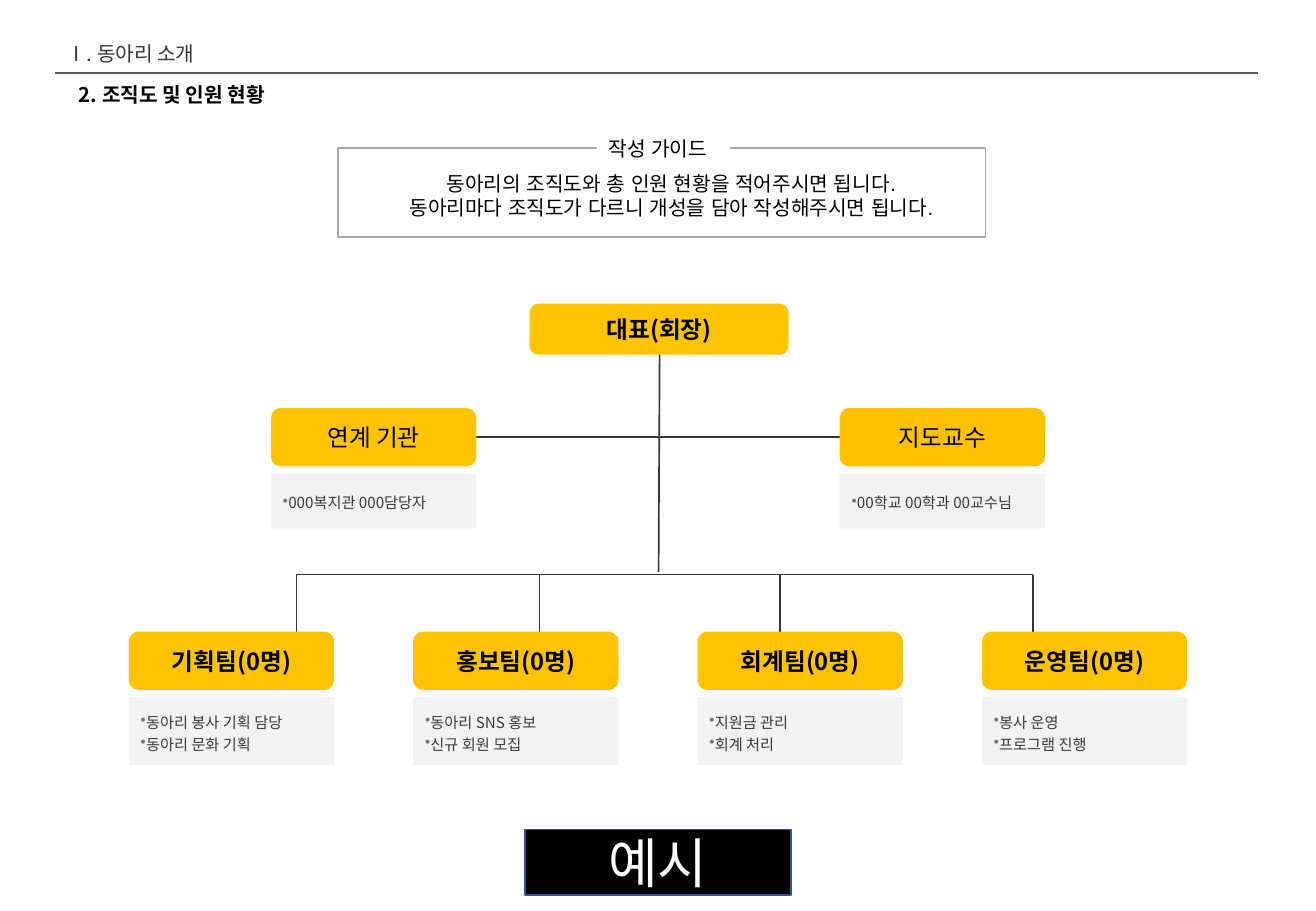
from lxml import etree
from pptx import Presentation
from pptx.dml.color import RGBColor
from pptx.enum.shapes import MSO_CONNECTOR, MSO_SHAPE
from pptx.enum.text import MSO_ANCHOR, MSO_AUTO_SIZE, PP_ALIGN
from pptx.oxml.ns import qn
from pptx.util import Inches, Pt

RECT, ROUND = MSO_SHAPE.RECTANGLE, MSO_SHAPE.ROUNDED_RECTANGLE
STRAIGHT = MSO_CONNECTOR.STRAIGHT
TOP, MIDDLE, BOTTOM = MSO_ANCHOR.TOP, MSO_ANCHOR.MIDDLE, MSO_ANCHOR.BOTTOM
LEFT, CENTER = PP_ALIGN.LEFT, PP_ALIGN.CENTER
FIXED = MSO_AUTO_SIZE.NONE

BLACK = RGBColor(0x00, 0x00, 0x00)
WHITE = RGBColor(0xFF, 0xFF, 0xFF)
INK = RGBColor(0x36, 0x33, 0x3A)
RULE = RGBColor(0x59, 0x59, 0x59)
FRAME = RGBColor(0xA6, 0xA6, 0xA6)
YELLOW = RGBColor(0xFF, 0xC3, 0x05)
AMBER = RGBColor(0xFF, 0xC0, 0x00)
PALE = RGBColor(0xF2, 0xF2, 0xF2)
NOTE = RGBColor(0x3B, 0x38, 0x38)
BULLET = RGBColor(0x76, 0x6F, 0x6B)
BLUE = RGBColor(0x32, 0x54, 0x91)
SANS, ARIAL = "Noto Sans CJK KR", "Arial"

deck = Presentation()
deck.slide_width, deck.slide_height = Inches(10.83), Inches(7.5)
slide = deck.slides.add_slide(deck.slide_layouts[5])
shapes = slide.shapes


def box(kind, place, fill=None, line=None):
    shape = shapes.add_shape(kind, *map(Inches, place))
    shape.shadow.inherit = False
    for part, color in ((shape.fill, fill), (shape.line.fill, line)):
        if color is None:
            part.background()
        else:
            part.solid()
            part.fore_color.rgb = color
    if line is not None:
        shape.line.width = Pt(1)
    return shape


def write(shape, lines, size, color, face=SANS, bold=False, frame={}, para={}, bullet=False):
    text = shape.text_frame
    text.text = "\n".join(lines)
    for key, value in {"word_wrap": True, "auto_size": FIXED, "vertical_anchor": MIDDLE, **frame}.items():
        setattr(text, key, value)
    for item in text.paragraphs:
        for key, value in {"alignment": CENTER, **para}.items():
            setattr(item, key, value)
        if bullet:
            props = item._p.get_or_add_pPr()
            props.set("marL", "0")
            props.set("indent", str(Inches(-0.2)))
            tint = etree.SubElement(props, qn("a:buClr"))
            etree.SubElement(tint, qn("a:srgbClr"), val=str(BULLET))
            etree.SubElement(props, qn("a:buChar"), char="•")
        font = item.runs[0].font
        for key, value in {"name": face, "size": Pt(size), "bold": bold}.items():
            setattr(font, key, value)
        font.color.rgb = color
        latin = font._element.find(qn("a:latin"))
        latin.addnext(etree.Element(qn("a:ea"), typeface=face))


title = shapes.title
spot = {"left": 0.55, "top": 0.65, "width": 3.75, "height": 0.32}
for key, value in spot.items():
    setattr(title, key, Inches(value))
write(title, ["2. 조직도 및 인원 현황"], 12, BLACK, bold=True, frame={"vertical_anchor": TOP},
      para={"alignment": LEFT, "line_spacing": 0.9, "space_before": Pt(10)})

head = shapes.add_textbox(*map(Inches, (0.45, 0.21, 1.34, 0.38)))
write(head, ["Ⅰ. 동아리 소개"], 12, INK, frame={"vertical_anchor": BOTTOM},
      para={"alignment": LEFT, "line_spacing": 0.9})

box(RECT, (2.78, 1.22, 5.33, 0.73), line=FRAME)
label = box(RECT, (4.91, 1.07, 1.1, 0.3), WHITE)
write(label, ["작성 가이드"], 12, BLACK, ARIAL,
      frame={"word_wrap": False, "vertical_anchor": TOP}, para={"alignment": LEFT})
guide = shapes.add_textbox(*map(Inches, (2.65, 1.36, 5.75, 0.5)))
write(guide, ["동아리의 조직도와 총 인원 현황을 적어주시면 됩니다.",
              "동아리마다 조직도가 다르니 개성을 담아 작성해주시면 됩니다."],
      12, BLACK, ARIAL, frame={"vertical_anchor": TOP})

drops = [2.44, 4.44, 6.42, 8.5]
lines = [
    (0.45, 0.6, 10.35, 0.6, RULE, 1.5),
    (5.43, 2.61, 5.42, 4.71, INK, 1),
    (drops[0], 4.73, drops[-1], 4.73, INK, 1),
    (3.92, 3.6, 6.91, 3.6, INK, 1),
]
lines += [(x, 4.73, x, 5.21, INK, 1) for x in drops]
for *ends, color, width in lines:
    link = shapes.add_connector(STRAIGHT, *map(Inches, ends))
    link.line.color.rgb = color
    link.line.width = Pt(width)
    etree.SubElement(link._element.spPr, qn("a:effectLst"))

chief = box(ROUND, (4.36, 2.5, 2.13, 0.42), YELLOW)
write(chief, ["대표(회장)"], 14, BLACK, bold=True)

cards = [
    (2.23, 3.36, 0.45, YELLOW, False, "연계 기관", ["000복지관 000담당자"]),
    (6.91, 3.36, 0.45, AMBER, False, "지도교수", ["00학교 00학과 00교수님"]),
]
teams = [
    ("기획팀(0명)", ["동아리 봉사 기획 담당", "동아리 문화 기획"]),
    ("홍보팀(0명)", ["동아리 SNS 홍보", "신규 회원 모집"]),
    ("회계팀(0명)", ["지원금 관리", "회계 처리"]),
    ("운영팀(0명)", ["봉사 운영", "프로그램 진행"]),
]
for i, (name, tasks) in enumerate(teams):
    cards.append((1.06 + 2.34 * i, 5.2, 0.56, YELLOW, True, name, tasks))

for x, y, height, fill, bold, name, tasks in cards:
    write(box(ROUND, (x, y, 1.69, 0.48), fill), [name], 14, BLACK, bold=bold)
    panel = box(RECT, (x, y + 0.54, 1.69, height), PALE)
    write(panel, tasks, 9, NOTE, frame={"word_wrap": False},
          para={"alignment": LEFT, "line_spacing": 1.2}, bullet=True)

stamp = box(RECT, (4.32, 6.83, 2.19, 0.54), BLACK, BLUE)
write(stamp, ["예시"], 32, WHITE)

deck.save("out.pptx")
